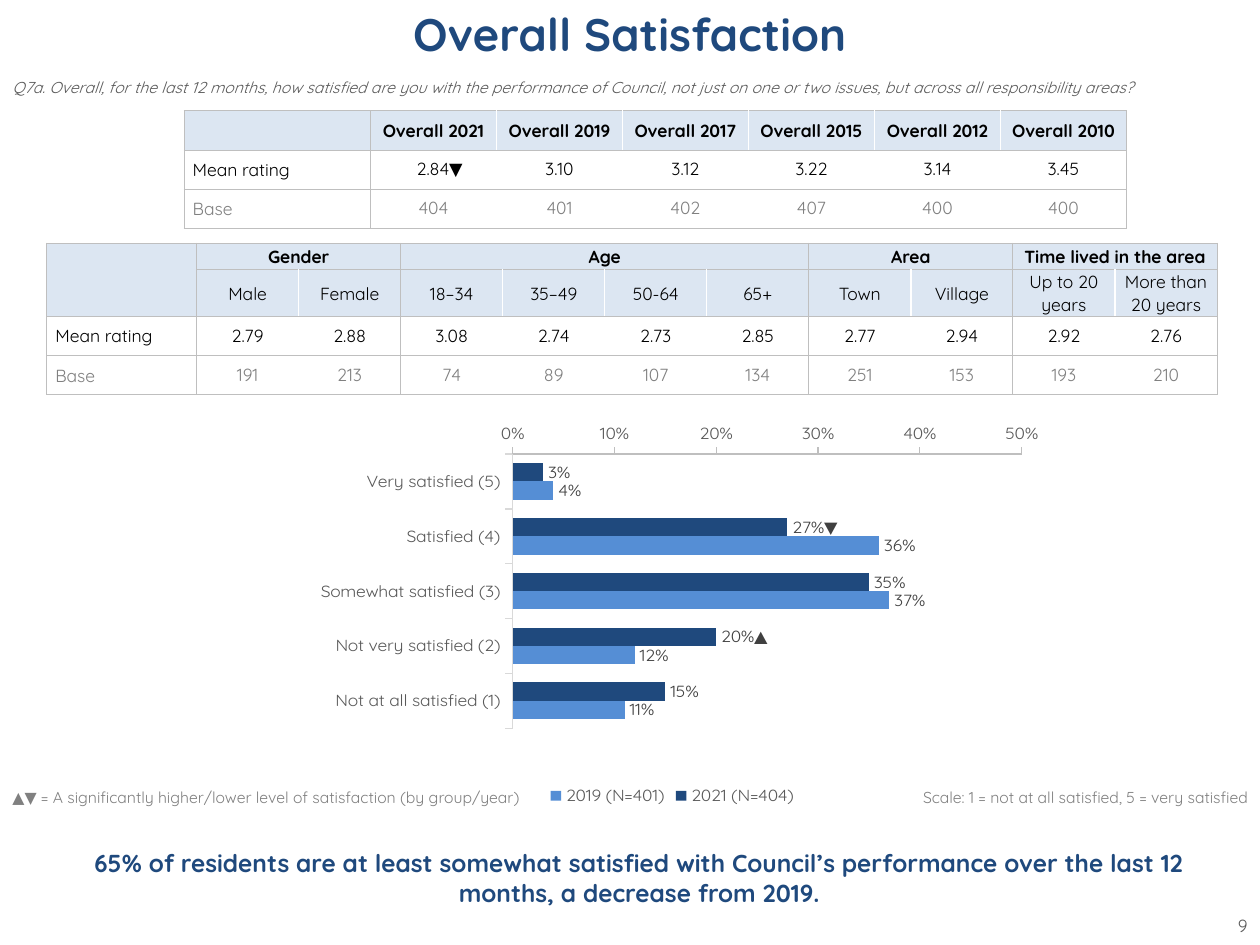
from lxml import etree
from pptx import Presentation
from pptx.chart.data import CategoryChartData
from pptx.dml.color import RGBColor
from pptx.enum.chart import (XL_AXIS_CROSSES, XL_CHART_TYPE, XL_LABEL_POSITION,
                             XL_LEGEND_POSITION, XL_TICK_MARK)
from pptx.enum.text import MSO_ANCHOR, PP_ALIGN
from pptx.oxml import parse_xml
from pptx.oxml.ns import nsdecls, qn
from pptx.util import Inches, Pt

NAVY = RGBColor(0x1F, 0x49, 0x7D)
BLUE = RGBColor(0x55, 0x8E, 0xD5)
PALE = RGBColor(0xDC, 0xE6, 0xF2)
WHITE = RGBColor(0xFF, 0xFF, 0xFF)
BLACK = RGBColor(0, 0, 0)
DARK = RGBColor(0x40, 0x40, 0x40)
SLATE = RGBColor(0x59, 0x59, 0x59)
GREY = RGBColor(0x80, 0x80, 0x80)
RULE = RGBColor(0xBF, 0xBF, 0xBF)
LIGHT = RGBColor(0xD9, 0xD9, 0xD9)
FACE = "Quicksand"

LEFT, CENTER, RIGHT = PP_ALIGN.LEFT, PP_ALIGN.CENTER, PP_ALIGN.RIGHT
TOP, MIDDLE = MSO_ANCHOR.TOP, MSO_ANCHOR.MIDDLE
BARS = XL_CHART_TYPE.BAR_CLUSTERED
BOTTOM = XL_LEGEND_POSITION.BOTTOM
OUTER = XL_LABEL_POSITION.OUTSIDE_END
TICK = XL_TICK_MARK.OUTSIDE
MAX = XL_AXIS_CROSSES.MAXIMUM

YEARS = [
    ["", *(f"Overall {year}" for year in (2021, 2019, 2017, 2015, 2012, 2010))],
    ["Mean rating", "2.84▼", "3.10", "3.12", "3.22", "3.14", "3.45"],
    ["Base", "404", "401", "402", "407", "400", "400"],
]
GROUPS = [
    ["", "Gender", "", "Age", "", "", "", "Area", "", "Time lived in the area", ""],
    ["", "Male", "Female", "18–34", "35–49", "50-64", "65+", "Town", "Village",
     "Up to 20 years", "More than 20 years"],
    ["Mean rating", "2.79", "2.88", "3.08", "2.74", "2.73", "2.85", "2.77", "2.94",
     "2.92", "2.76"],
    ["Base", "191", "213", "74", "89", "107", "134", "251", "153", "193", "210"],
]
LEVELS = ["Very satisfied (5)", "Satisfied (4)", "Somewhat satisfied (3)",
          "Not very satisfied (2)", "Not at all satisfied (1)"]
SERIES = [
    ("2021 (N=404)", (0.03, 0.27, 0.35, 0.2, 0.15), NAVY),
    ("2019 (N=401)", (0.04, 0.36, 0.37, 0.12, 0.11), BLUE),
]
MARKS = {1: "27%▼", 3: "20%▲"}


def set_font(font, size, color, bold=False, italic=False):
    font.name = FACE
    font.size = Pt(size)
    font.color.rgb = color
    font.bold = bold
    font.italic = italic


def add_text(slide, box, text, size, color, align=LEFT, anchor=TOP,
             bold=False, italic=False):
    frame = slide.shapes.add_textbox(*map(Inches, box)).text_frame
    frame.word_wrap = True
    frame.vertical_anchor = anchor
    frame.text = text
    para = frame.paragraphs[0]
    para.alignment = align
    set_font(para.runs[0].font, size, color, bold, italic)


def add_rules(cell, sides):
    props = cell._tc.get_or_add_tcPr()
    for spot, side in enumerate(sides):
        props.insert(spot, parse_xml(
            f'<a:ln{side} {nsdecls("a")} w="6350"><a:solidFill>'
            f'<a:srgbClr val="{RULE}"/></a:solidFill></a:ln{side}>'))


def fill_cell(cell, text, label, color, bold, shade):
    cell.fill.solid()
    cell.fill.fore_color.rgb = shade
    cell.vertical_anchor = MIDDLE
    cell.margin_left = cell.margin_right = Inches(0.07 if label else 0.01)
    cell.margin_top = cell.margin_bottom = 0
    cell.text = text
    para = cell.text_frame.paragraphs[0]
    if label:
        para.line_spacing = 1.07
    for run in para.runs:
        set_font(run.font, 10, color, bold)
    if not text:
        etree.SubElement(para._p, qn("a:endParaRPr"), sz="1000")
    return para


def add_grid(slide, box, data, first, highs, edges, spans=()):
    heads = len(data) - 2
    count = len(data[0])
    table = slide.shapes.add_table(len(data), count, *map(Inches, box)).table
    table.first_row = table.horz_banding = False
    for col, column in enumerate(table.columns):
        column.width = Inches((box[2] - first) / (count - 1) if col else first)
    for row, high in zip(table.rows, highs):
        row.height = Inches(high)
    for top, left, low, right in spans:
        table.cell(top, left).merge(table.cell(low, right))
    for row, texts in enumerate(data):
        for col, text in enumerate(texts):
            cell = table.cell(row, col)
            head = row < heads
            para = fill_cell(cell, text, head or col == 0,
                             GREY if row == len(data) - 1 else BLACK,
                             row == 0, PALE if head else WHITE)
            para.alignment = CENTER if head or col else LEFT
            if "▼" in text:
                para._p.get_or_add_pPr().set("indent", str(Inches(0.1)))
            if cell.is_spanned:
                continue
            end = col + (cell.span_width if cell.is_merge_origin else 1)
            sides = "L" * (col in edges) + "R" * (end in edges) + "TB"
            add_rules(cell, sides)


def set_plot(chart, left, top, width, height):
    area = chart._chartSpace.chart.plotArea
    old = area.find(qn("c:layout"))
    if old is not None:
        area.remove(old)
    parts = "".join(f'<c:{key} val="{val}"/>' for key, val in (
        ("layoutTarget", "inner"), ("xMode", "edge"), ("yMode", "edge"),
        ("x", left), ("y", top), ("w", width), ("h", height)))
    area.insert(0, parse_xml(f'<c:layout {nsdecls("c")}><c:manualLayout>{parts}'
                             '</c:manualLayout></c:layout>'))


def add_bars(slide, box):
    data = CategoryChartData(number_format="0%")
    data.categories = LEVELS
    for name, values, color in SERIES:
        data.add_series(name, values)
    chart = slide.shapes.add_chart(BARS, *map(Inches, box), data).chart
    chart.has_title = False
    set_font(chart.font, 10, SLATE)
    chart.has_legend = True
    chart.legend.position = BOTTOM
    chart.legend.include_in_layout = False
    set_font(chart.legend.font, 10, SLATE)
    plot = chart.plots[0]
    plot.gap_width = 100
    plot.overlap = 0
    plot.vary_by_categories = False
    for series, (name, values, color) in zip(plot.series, SERIES):
        series.format.fill.solid()
        series.format.fill.fore_color.rgb = color
        labels = series.data_labels
        labels.show_value = True
        labels.number_format = "0%"
        labels.number_format_is_linked = False
        labels.position = OUTER
        set_font(labels.font, 10, DARK)
    for spot, text in MARKS.items():
        label = plot.series[0].points[spot].data_label
        label.text_frame.text = text
        set_font(label.text_frame.paragraphs[0].runs[0].font, 10, DARK)
        label.position = OUTER
    levels, scale = chart.category_axis, chart.value_axis
    for axis, color in ((levels, LIGHT), (scale, RULE)):
        axis.has_major_gridlines = False
        axis.major_tick_mark = TICK
        axis.format.line.color.rgb = color
        axis.format.line.width = Pt(0.75)
        set_font(axis.tick_labels.font, 10, SLATE)
    levels.reverse_order = True
    levels.crosses = MAX
    scale.minimum_scale, scale.maximum_scale, scale.major_unit = 0, 0.5, 0.1
    scale.tick_labels.number_format = "0%"
    scale.tick_labels.number_format_is_linked = False
    set_plot(chart, 0.29, 0, 0.67, 0.77)


def add_heading(slide):
    add_text(slide, (0, 0, 10, 0.55), "Overall Satisfaction", 26, NAVY, CENTER, bold=True)
    add_text(slide, (0, 0.57, 10, 0.24),
             "Q7a. Overall, for the last 12 months, how satisfied are you with the "
             "performance of Council, not just on one or two issues, but across all "
             "responsibility areas?", 9, SLATE, anchor=MIDDLE, italic=True)


def add_footer(slide):
    add_text(slide, (0, 6.2, 4.4, 0.25),
             "▲▼ = A significantly higher/lower level of satisfaction (by group/year)",
             9, GREY)
    add_text(slide, (7.05, 6.2, 2.95, 0.25),
             "Scale: 1 = not at all satisfied, 5 = very satisfied", 9, GREY, RIGHT)
    add_text(slide, (0.51, 6.43, 9.13, 1.07),
             "65% of residents are at least somewhat satisfied with Council’s "
             "performance over the last 12 months, a decrease from 2019.",
             14, NAVY, CENTER, MIDDLE, bold=True)
    add_text(slide, (9.57, 7.21, 0.43, 0.27), "9", 10, SLATE, RIGHT)


def main():
    deck = Presentation()
    deck.slide_width, deck.slide_height = Inches(10), Inches(7.5)
    slide = deck.slides.add_slide(deck.slide_layouts[6])
    add_heading(slide)
    add_grid(slide, (1.46, 0.88, 7.48, 0.94), YEARS, 1.48, [0.31] * 3, (0, 1, 7))
    add_grid(slide, (0.37, 1.93, 9.29, 1.2), GROUPS, 1.19, [0.21, 0.37, 0.31, 0.31],
             (0, 1, 3, 7, 9, 11),
             [(0, 0, 1, 0), (0, 1, 0, 2), (0, 3, 0, 6), (0, 7, 0, 8), (0, 9, 0, 10)])
    add_bars(slide, (2.32, 3.36, 6.03, 3.07))
    add_footer(slide)
    deck.save("out.pptx")


if __name__ == "__main__":
    main()
